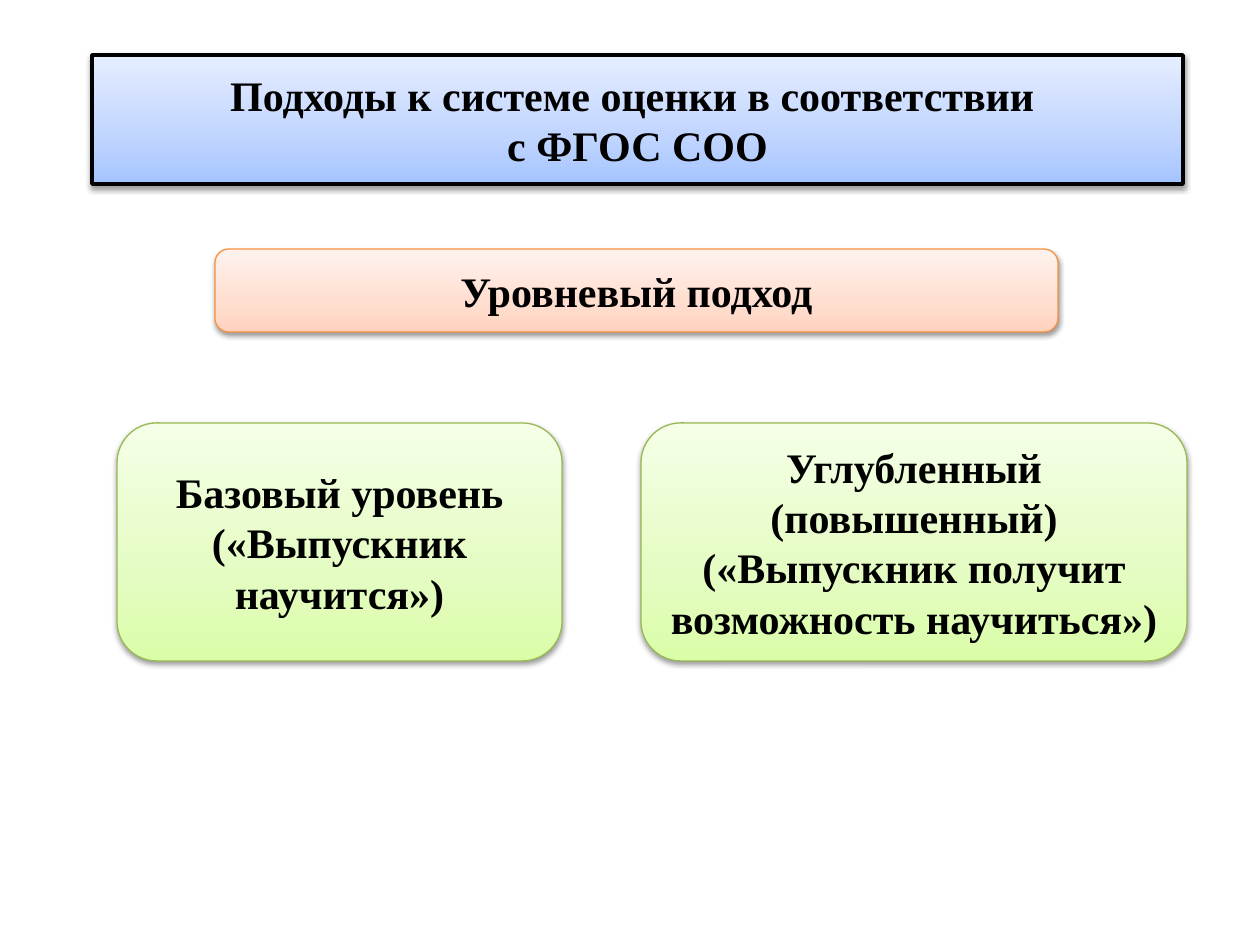
from copy import deepcopy

from lxml import etree
from pptx import Presentation
from pptx.dml.color import RGBColor
from pptx.enum.shapes import MSO_SHAPE
from pptx.enum.text import MSO_ANCHOR, MSO_AUTO_SIZE, PP_ALIGN
from pptx.oxml.ns import qn
from pptx.util import Emu, Pt

PX = 914400 / 126
TITLE_ONLY = 5
ROUNDED = MSO_SHAPE.ROUNDED_RECTANGLE
CENTER = PP_ALIGN.CENTER
FRAME = {"vertical_anchor": MSO_ANCHOR.MIDDLE, "word_wrap": True,
         "auto_size": MSO_AUTO_SIZE.NONE}
FONT = {"name": "Times New Roman", "size": Pt(24), "bold": True}

COLORS = {"text": "000000", "shadow": "000000"}
STYLES = {
    "blue": {"stops": ["A4C4FF", "BFD4FF", "E6EEFF"], "line": "000000", "width": 2.25},
    "orange": {"stops": ["FFD2BD", "FFDED0", "FFF2ED"], "line": "F69240", "width": 0.75},
    "green": {"stops": ["DAFDA7", "E4FCC2", "F5FFE7"], "line": "98B955", "width": 0.75},
}
STOP_POSITIONS = [0, 0.35, 1]

HEADING = ["Подходы к системе оценки в соответствии ", "с ФГОС СОО"]
HEADING_BOX = (92, 55, 1091, 129)
APPROACH = ["Уровневый подход"]
APPROACH_BOX = (215, 249, 843, 83)
LEVELS_TOP, LEVELS_HEIGHT = 423, 238
LEVELS = [
    (117, 445, ["Базовый уровень", "(«Выпускник научится»)"]),
    (641, 546, ["Углубленный (повышенный)",
                "(«Выпускник получит возможность научиться»)"]),
]


def emu(box):
    return [Emu(round(length * PX)) for length in box]


def add_shadow(shape):
    shape.shadow.inherit = False
    effects = shape._element.spPr.find(qn("a:effectLst"))
    outer = etree.SubElement(effects, qn("a:outerShdw"), blurRad="40000",
                             dist="20000", dir="5400000", rotWithShape="0")
    color = etree.SubElement(outer, qn("a:srgbClr"), val=COLORS["shadow"])
    etree.SubElement(color, qn("a:alpha"), val="38000")


def fill_gradient(shape, colors):
    shape.fill.gradient()
    shape.fill.gradient_angle = 90
    stop_list = shape._element.spPr.find(".//" + qn("a:gsLst"))
    stop_list.append(deepcopy(stop_list[-1]))
    for stop, position, color in zip(shape.fill.gradient_stops, STOP_POSITIONS, colors):
        stop.position = position
        stop.color.rgb = RGBColor.from_string(color)


def write(shape, lines):
    frame = shape.text_frame
    for key, value in FRAME.items():
        setattr(frame, key, value)
    frame.text = "\n".join(lines)
    for paragraph in frame.paragraphs:
        paragraph.alignment = CENTER
        font = paragraph.runs[0].font
        for key, value in FONT.items():
            setattr(font, key, value)
        font.color.rgb = RGBColor.from_string(COLORS["text"])


def format_panel(shape, lines, style_name):
    style = STYLES[style_name]
    fill_gradient(shape, style["stops"])
    shape.line.color.rgb = RGBColor.from_string(style["line"])
    shape.line.width = Pt(style["width"])
    add_shadow(shape)
    write(shape, lines)


def round_title(title, box):
    """Place the title placeholder and give it rounded corners."""
    title.left, title.top, title.width, title.height = emu(box)
    geometry = etree.Element(qn("a:prstGeom"), prst="roundRect")
    etree.SubElement(geometry, qn("a:avLst"))
    title._element.spPr.find(qn("a:xfrm")).addnext(geometry)


def main():
    deck = Presentation()
    deck.slide_width, deck.slide_height = emu((1260, 945))
    slide = deck.slides.add_slide(deck.slide_layouts[TITLE_ONLY])

    heading = slide.shapes.title
    round_title(heading, HEADING_BOX)
    format_panel(heading, HEADING, "blue")

    panels = [(APPROACH_BOX, APPROACH, "orange")]
    panels += [((left, LEVELS_TOP, width, LEVELS_HEIGHT), lines, "green")
               for left, width, lines in LEVELS]
    for box, lines, style_name in panels:
        format_panel(slide.shapes.add_shape(ROUNDED, *emu(box)), lines, style_name)

    deck.save("out.pptx")


if __name__ == "__main__":
    main()
